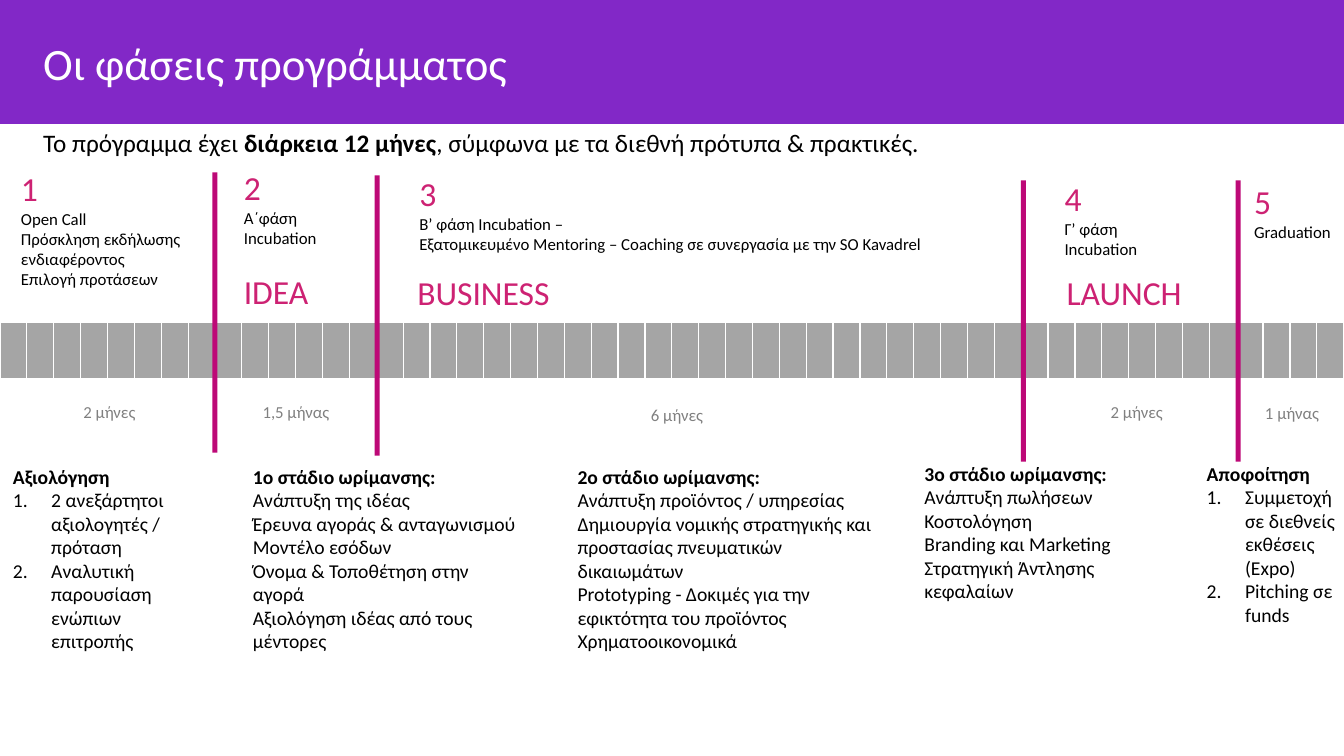
import pptx
import pptx.dml.color
import pptx.enum.shapes
import pptx.enum.text
import pptx.oxml
import pptx.util
from pptx.util import Inches

COLORS = {
    "purple": "8228C7", "magenta": "BD0977", "pink": "CD2273", "cell": "A5A5A5",
    "muted": "808080", "black": "000000", "white": "FFFFFF",
}
FONT = "Calibri"
WIDTH, HEIGHT = 13.33, 7.5
NAMESPACE = 'xmlns:a="http://schemas.openxmlformats.org/drawingml/2006/main"'
ALIGN = pptx.enum.text.PP_ALIGN
ANCHOR = pptx.enum.text.MSO_ANCHOR

# left, top, width, height, number, lines
PHASES = [
    (0.11, 1.62, 1.86, 1.31, "1",
     ["Open Call", "Πρόσκληση εκδήλωσης ενδιαφέροντος", "Επιλογή προτάσεων"]),
    (2.32, 1.61, 1.19, 0.91, "2", ["Α΄φάση Incubation"]),
    (4.06, 1.67, 5.45, 0.91, "3",
     ["B’ φάση Incubation –",
      "Εξατομικευμένο Mentoring – Coaching σε συνεργασία με την SO Kavadrel"]),
    (10.46, 1.72, 1.19, 0.91, "4", ["Γ’ φάση Incubation"]),
    (12.34, 1.75, 0.99, 0.71, "5", ["Graduation"]),
]
# center, top, height
DIVIDERS = [(2.13, 1.71, 2.78), (3.74, 1.74, 2.78), (10.15, 1.79, 2.79), (12.28, 1.79, 2.79)]
# left, top, width, text
DURATIONS = [
    (0.49, 3.94, 1.19, "2 μήνες"), (2.34, 3.94, 1.19, "1,5 μήνας"),
    (6.12, 3.97, 1.19, "6 μήνες"), (10.68, 3.94, 1.19, "2 μήνες"),
    (12.3, 3.95, 1.03, "1 μήνας"),
]
# left, top, width, text
STAGE_NAMES = [
    (2.32, 2.64, 1.2, "IDEA"), (4.04, 2.65, 1.81, "BUSINESS"), (10.48, 2.65, 1.54, "LAUNCH"),
]
# left, top, width, height, heading, lines, numbered
DETAILS = [
    (0.03, 4.56, 2.03, 1.99, "Αξιολόγηση",
     ["2 ανεξάρτητοι αξιολογητές / πρόταση", "Αναλυτική παρουσίαση ενώπιων επιτροπής"], True),
    (2.41, 4.56, 2.82, 1.99, "1ο στάδιο ωρίμανσης:",
     ["Ανάπτυξη της ιδέας", "Έρευνα αγοράς & ανταγωνισμού", "Μοντέλο εσόδων",
      "Όνομα & Τοποθέτηση στην αγορά", "Αξιολόγηση ιδέας από τους μέντορες"], False),
    (5.63, 4.56, 3.27, 1.99, "2ο στάδιο ωρίμανσης:",
     ["Ανάπτυξη προϊόντος / υπηρεσίας",
      "Δημιουργία νομικής στρατηγικής και προστασίας πνευματικών δικαιωμάτων",
      "Prototyping - Δοκιμές για την εφικτότητα του προϊόντος", "Χρηματοοικονομικά"], False),
    (9.07, 4.53, 2.7, 1.51, "3ο στάδιο ωρίμανσης:",
     ["Ανάπτυξη πωλήσεων Κοστολόγηση", "Branding και Marketing",
      "Στρατηγική Άντλησης κεφαλαίων"], False),
    (11.87, 4.53, 1.59, 1.75, "Αποφοίτηση",
     ["Συμμετοχή σε διεθνείς εκθέσεις (Expo)", "Pitching σε funds"], True),
]


def rgb(name):
    return pptx.dml.color.RGBColor.from_string(COLORS[name])


class SlideBuilder:
    def __init__(self, slide):
        self.slide = slide

    def rectangle(self, left, top, width, height, color):
        shape = self.slide.shapes.add_shape(
            pptx.enum.shapes.MSO_SHAPE.RECTANGLE,
            Inches(left), Inches(top), Inches(width), Inches(height))
        shape.shadow.inherit = False
        shape.fill.solid()
        shape.fill.fore_color.rgb = rgb(color)
        shape.line.fill.background()

    def text(self, left, top, width, height, anchor=ANCHOR.TOP):
        """Add an empty wrapping text box and return its text frame."""
        box = self.slide.shapes.add_textbox(
            Inches(left), Inches(top), Inches(width), Inches(height))
        frame = box.text_frame
        frame.word_wrap = True
        frame.vertical_anchor = anchor
        return frame

    def paragraph(self, frame, runs, size, color="black", align=ALIGN.LEFT, numbered=False):
        """Fill the first empty paragraph or append one; runs are (text, bold) pairs."""
        first = frame.paragraphs[0]
        paragraph = frame.add_paragraph() if first.runs else first
        paragraph.alignment = align
        if numbered:
            properties = paragraph._p.get_or_add_pPr()
            properties.set("marL", str(Inches(0.38)))
            properties.set("indent", str(Inches(-0.38)))
            properties.append(pptx.oxml.parse_xml(
                f'<a:buAutoNum {NAMESPACE} type="arabicPeriod"/>'))
        for text, bold in runs:
            run = paragraph.add_run()
            run.text = text
            run.font.name = FONT
            run.font.size = pptx.util.Pt(size)
            run.font.bold = bold
            run.font.color.rgb = rgb(color)
        return paragraph

    def timeline(self, left, top, width, height, columns):
        table = self.slide.shapes.add_table(
            1, columns, Inches(left), Inches(top), Inches(width), Inches(height)).table
        for column in table.columns:
            column.width = Inches(width / columns)
        for cell in table.iter_cells():
            cell.margin_left = cell.margin_right = 0
            properties = cell._tc.get_or_add_tcPr()
            for side, points in (("L", 1), ("R", 1), ("T", 1), ("B", 3)):
                properties.append(pptx.oxml.parse_xml(
                    f'<a:ln{side} {NAMESPACE} w="{pptx.util.Pt(points)}"><a:solidFill>'
                    f'<a:srgbClr val="{COLORS["white"]}"/></a:solidFill></a:ln{side}>'))
            cell.fill.solid()
            cell.fill.fore_color.rgb = rgb("cell")


def main():
    presentation = pptx.Presentation()
    presentation.slide_width = Inches(WIDTH)
    presentation.slide_height = Inches(HEIGHT)
    builder = SlideBuilder(presentation.slides.add_slide(presentation.slide_layouts[6]))

    builder.rectangle(0, 0, WIDTH, 1.23, "purple")
    title = builder.text(0.33, 0.27, 12.64, 0.77, ANCHOR.MIDDLE)
    builder.paragraph(title, [("Οι φάσεις προγράμματος", False)], 32, "white").line_spacing = 0.9
    summary = builder.text(0.33, 1.21, 11.53, 0.71)
    builder.paragraph(summary, [
        ("Το πρόγραμμα έχει ", False), ("διάρκεια 12 μήνες", True),
        (", σύμφωνα με τα διεθνή πρότυπα & πρακτικές.", False)], 18)

    builder.timeline(0, 3.2, WIDTH, 0.57, 50)
    for center, top, height in DIVIDERS:
        builder.rectangle(center - 0.025, top, 0.05, height, "magenta")

    for left, top, width, height, number, lines in PHASES:
        frame = builder.text(left, top, width, height)
        builder.paragraph(frame, [(number, False)], 24, "pink")
        for line in lines:
            builder.paragraph(frame, [(line, False)], 12)
    for left, top, width, name in STAGE_NAMES:
        builder.paragraph(builder.text(left, top, width, 0.51), [(name, False)], 24, "pink")
    for left, top, width, duration in DURATIONS:
        builder.paragraph(builder.text(left, top, width, 0.3), [(duration, False)],
                          12, "muted", ALIGN.CENTER)
    for left, top, width, height, heading, lines, numbered in DETAILS:
        frame = builder.text(left, top, width, height)
        builder.paragraph(frame, [(heading, True)], 14)
        for line in lines:
            builder.paragraph(frame, [(line, False)], 14, numbered=numbered)

    presentation.save("out.pptx")


if __name__ == "__main__":
    main()
